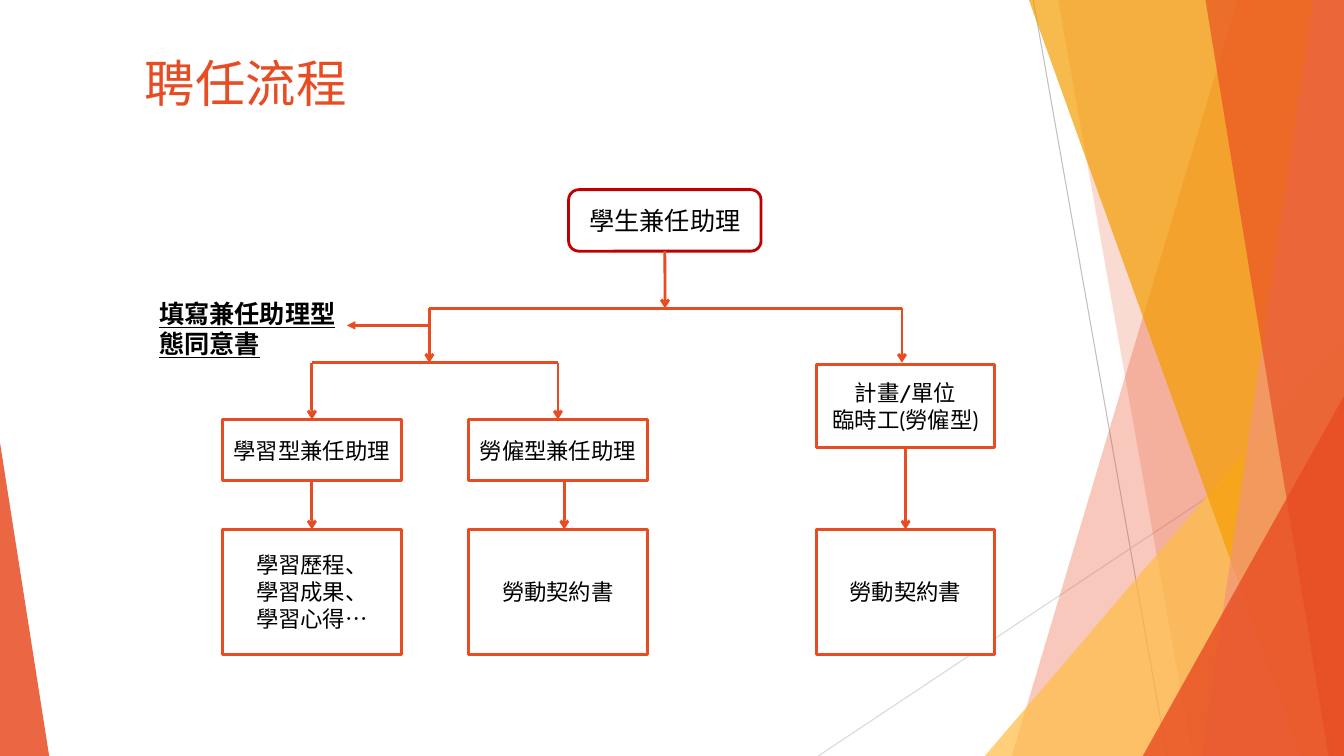
from dataclasses import dataclass
from typing import Optional

from pptx import Presentation
from pptx.dml.color import RGBColor
from pptx.enum import shapes, text
from pptx.oxml import ns, xmlchemy
from pptx.util import Cm, Pt


@dataclass(frozen=True)
class Theme:
    font: str = "Cabin"
    accent: str = "E84C22"
    root_line: str = "C00000"
    ink: str = "000000"
    paper: str = "FFFFFF"
    amber: str = "F49D00"
    pale_amber: str = "FFBD47"
    salmon: str = "F1947A"
    light_grey: str = "BFBFBF"
    pale_grey: str = "D9D9D9"
    title_size: int = 36
    large_size: int = 18
    box_size: int = 16
    line_width: float = 2
    hairline: float = 0.75


@dataclass(frozen=True)
class Band:
    """A strip from its slanted left edge to the right side of the slide."""
    top_x: float
    bottom_x: float
    color: str
    opacity: int


@dataclass(frozen=True)
class Wedge:
    """A right triangle standing on the bottom edge; peak 0 is left, 1 is right."""
    left: float
    width: float
    top: float
    peak: int
    color: str
    opacity: int


@dataclass(frozen=True)
class Box:
    label: str
    left: float
    top: float
    width: float
    height: float
    size: int
    line: str
    rounded: bool = False


@dataclass(frozen=True)
class Line:
    x1: float
    y1: float
    x2: float
    y2: float
    head: Optional[str] = None
    start: Optional[str] = None
    end: Optional[str] = None
    color: str = Theme.accent
    width: float = Theme.line_width


THEME = Theme()
SLIDE_W, SLIDE_H = 33.87, 19.05
BOX_W, BOX_H, DOC_H = 4.5, 1.55, 3.15
COL_LEARN, COL_LABOR, COL_TEMP = 5.61, 11.81, 20.57
ROW_TYPE, ROW_DOC = 10.57, 13.34
FORK_TOP, FORK_LOW = 7.77, 9.14
ROOT_X, LEARN_X, LABOR_X = 16.76, 7.86, 14.06
ASSISTANT_X, TEMP_X = 10.82, 22.73

BACK_LINES = [
    Line(26.04, 0, 29.41, SLIDE_H, color=THEME.light_grey, width=THEME.hairline),
    Line(SLIDE_W, 10.24, 20.62, SLIDE_H, color=THEME.pale_grey, width=THEME.hairline),
]
DECOR = [
    Band(31.19, 25.5, THEME.accent, 30),
    Band(26.67, 30.05, THEME.accent, 20),
    Wedge(24.82, 9.05, 8.46, 1, THEME.pale_amber, 72),
    Band(25.93, 32.79, THEME.amber, 70),
    Band(33.1, 30.28, THEME.salmon, 70),
    Band(30.38, 33.48, THEME.accent, 65),
    Wedge(28.8, 5.07, 9.98, 1, THEME.accent, 80),
    Wedge(0, 1.24, 11.15, 0, THEME.accent, 85),
]
BOXES = {
    "root": Box("學生兼任助理", 14.33, 4.78, 4.85, BOX_H,
                THEME.large_size, THEME.root_line, True),
} | {
    key: Box(label, left, top, BOX_W, height, THEME.box_size, THEME.accent)
    for key, label, left, top, height in [
        ("learn", "學習型兼任助理", COL_LEARN, ROW_TYPE, BOX_H),
        ("labor", "勞僱型兼任助理", COL_LABOR, ROW_TYPE, BOX_H),
        ("temp", "計畫/單位\n臨時工(勞僱型)", COL_TEMP, 9.19, 2.08),
        ("learn_doc", "學習歷程、\v學習成果、\v學習心得…", COL_LEARN, ROW_DOC, DOC_H),
        ("labor_doc", "勞動契約書", COL_LABOR, ROW_DOC, DOC_H),
        ("temp_doc", "勞動契約書", COL_TEMP, ROW_DOC, DOC_H),
    ]
}
FLOW = [
    Line(ROOT_X, 6.33, ROOT_X, FORK_TOP, "arrow", start="root"),
    Line(ASSISTANT_X, FORK_TOP, TEMP_X, FORK_TOP),
    Line(ASSISTANT_X, FORK_TOP, ASSISTANT_X, FORK_LOW, "arrow"),
    Line(TEMP_X, FORK_TOP, TEMP_X, FORK_LOW, "arrow"),
    Line(ASSISTANT_X, 8.2, 8.74, 8.2, "triangle"),
    Line(LEARN_X, FORK_LOW, LABOR_X, FORK_LOW),
    Line(LEARN_X, FORK_LOW, LEARN_X, ROW_TYPE, "arrow", end="learn"),
    Line(LABOR_X, FORK_LOW, LABOR_X, ROW_TYPE, "arrow", end="labor"),
    Line(LEARN_X, 12.12, LEARN_X, ROW_DOC, "arrow", "learn", "learn_doc"),
    Line(14.22, 12.12, 14.22, ROW_DOC, "arrow"),
    Line(22.82, 11.27, 22.82, ROW_DOC, "arrow", "temp", "temp_doc"),
]


def rgb(color: str) -> RGBColor:
    return RGBColor.from_string(color)


def add_child(parent, tag: str, **attributes: str) -> None:
    child = xmlchemy.OxmlElement(tag)
    for name, value in attributes.items():
        child.set(name, value)
    parent.append(child)


def style_text(tf, size: int, color: str, align, bold: bool = False) -> None:
    for p in tf.paragraphs:
        p.alignment = align
        for r in p.runs:
            r.font.name = THEME.font
            r.font.size = Pt(size)
            r.font.color.rgb = rgb(color)
            r.font.bold = r.font.underline = bold


def add_decor(slide, item) -> None:
    if isinstance(item, Band):
        builder = slide.shapes.build_freeform(Cm(item.top_x), 0)
        corners = [(SLIDE_W, 0), (SLIDE_W, SLIDE_H), (item.bottom_x, SLIDE_H)]
        builder.add_line_segments([(Cm(x), Cm(y)) for x, y in corners])
        sp = builder.convert_to_shape()
    else:
        sp = slide.shapes.add_shape(
            shapes.MSO_SHAPE.ISOSCELES_TRIANGLE, Cm(item.left), Cm(item.top),
            Cm(item.width), Cm(SLIDE_H - item.top))
        sp.adjustments[0] = item.peak
    sp.shadow.inherit = False
    sp.line.fill.background()
    sp.fill.solid()
    sp.fill.fore_color.rgb = rgb(item.color)
    color = sp.fill._xPr.find(".//" + ns.qn("a:srgbClr"))
    add_child(color, "a:alpha", val=str(item.opacity * 1000))


def add_box(slide, box: Box):
    kind = shapes.MSO_SHAPE.ROUNDED_RECTANGLE if box.rounded else shapes.MSO_SHAPE.RECTANGLE
    sp = slide.shapes.add_shape(
        kind, Cm(box.left), Cm(box.top), Cm(box.width), Cm(box.height))
    sp.shadow.inherit = False
    sp.fill.solid()
    sp.fill.fore_color.rgb = rgb(THEME.paper)
    sp.line.color.rgb = rgb(box.line)
    sp.line.width = Pt(THEME.line_width)
    tf = sp.text_frame
    tf.text = box.label
    tf.word_wrap = True
    tf.vertical_anchor = text.MSO_ANCHOR.MIDDLE
    style_text(tf, box.size, THEME.ink, text.PP_ALIGN.CENTER)
    return sp


def add_line(slide, line: Line, boxes: dict) -> None:
    cxn = slide.shapes.add_connector(
        shapes.MSO_CONNECTOR.STRAIGHT, Cm(line.x1), Cm(line.y1), Cm(line.x2), Cm(line.y2))
    if line.start:
        cxn.begin_connect(boxes[line.start], 2)
    if line.end:
        cxn.end_connect(boxes[line.end], 0)
    cxn.line.color.rgb = rgb(line.color)
    cxn.line.width = Pt(line.width)
    if line.head:
        add_child(cxn.line._get_or_add_ln(), "a:tailEnd", type=line.head)
    add_child(cxn._element.spPr, "a:effectLst")


def add_title(slide) -> None:
    title = slide.shapes.title
    title.left, title.top, title.width, title.height = Cm(3.4), Cm(1.19), Cm(19.05), Cm(1.78)
    title.text_frame.text = "聘任流程"
    title.text_frame.vertical_anchor = text.MSO_ANCHOR.MIDDLE
    style_text(title.text_frame, THEME.title_size, THEME.accent, text.PP_ALIGN.LEFT)


def add_consent_note(slide) -> None:
    tf = slide.shapes.add_textbox(Cm(3.76), Cm(7.39), Cm(5.51), Cm(1.8)).text_frame
    tf.text = "填寫兼任助理型態同意書"
    tf.word_wrap = True
    style_text(tf, THEME.large_size, THEME.ink, text.PP_ALIGN.LEFT, bold=True)


def main() -> None:
    prs = Presentation()
    prs.slide_width, prs.slide_height = Cm(SLIDE_W), Cm(SLIDE_H)
    slide = prs.slides.add_slide(prs.slide_layouts[5])
    add_title(slide)
    for line in BACK_LINES:
        add_line(slide, line, {})
    for item in DECOR:
        add_decor(slide, item)
    boxes = {key: add_box(slide, box) for key, box in BOXES.items()}
    for line in FLOW:
        add_line(slide, line, boxes)
    add_consent_note(slide)
    prs.save("out.pptx")


if __name__ == "__main__":
    main()
